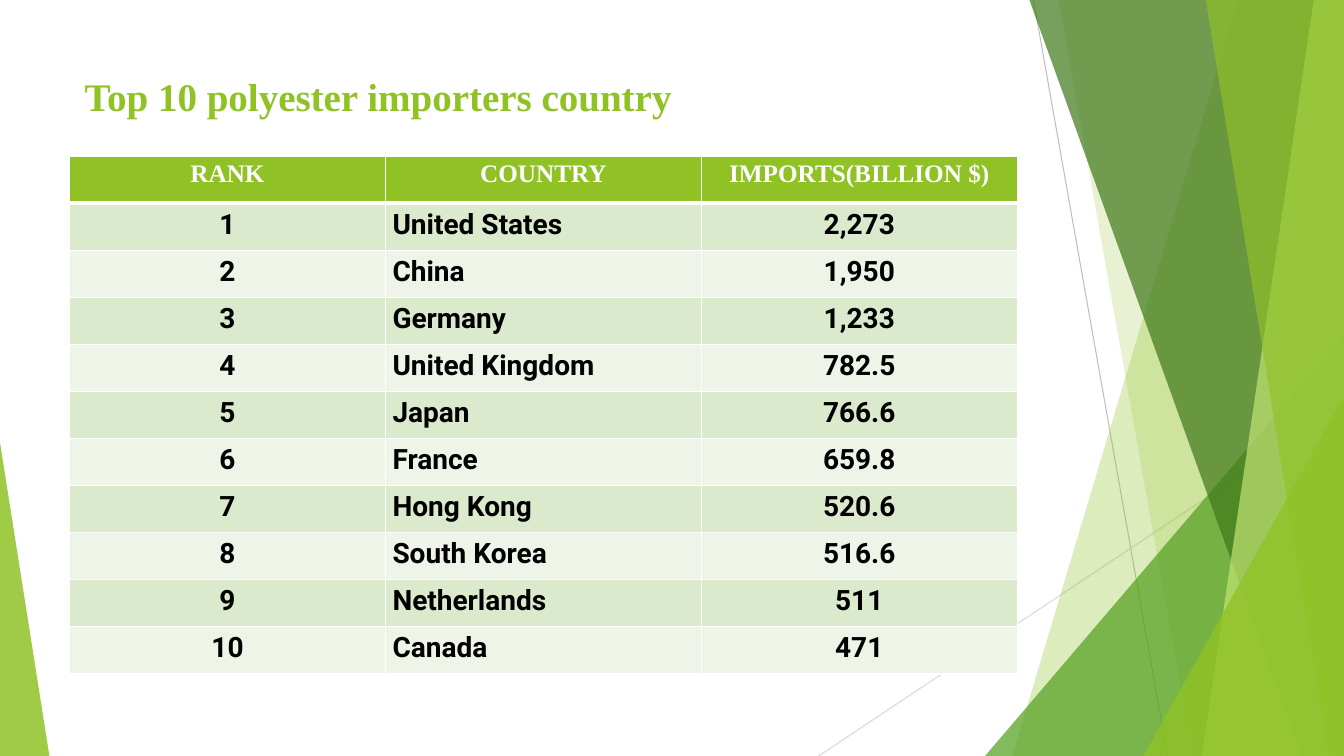
from lxml.etree import SubElement
from pptx import Presentation
from pptx.dml.color import RGBColor
from pptx.enum.shapes import MSO_CONNECTOR as Connector, MSO_SHAPE as Shape
from pptx.enum.text import MSO_ANCHOR as Anchor, PP_ALIGN as Align
from pptx.oxml.ns import qn
from pptx.util import Inches, Pt

WIDTH, HEIGHT = 13.33, 7.5
GREEN = "90C226"
SERIF, SANS = "Times New Roman", "Roboto"
TITLE = "Top 10 polyester importers country"
HEADERS = ["RANK", "COUNTRY", "IMPORTS(BILLION $)"]
IMPORTERS = [
    ("United States", "2,273"),
    ("China", "1,950"),
    ("Germany", "1,233"),
    ("United Kingdom", "782.5"),
    ("Japan", "766.6"),
    ("France", "659.8"),
    ("Hong Kong", "520.6"),
    ("South Korea", "516.6"),
    ("Netherlands", "511"),
    ("Canada", "471"),
]


def color(value):
    return RGBColor.from_string(value)


def add_span(para, text, size, font, tint):
    span = para.add_run()
    span.text = text
    span.font.size = Pt(size)
    span.font.name = font
    span.font.bold = True
    span.font.color.rgb = color(tint)


def paint(shape, tint, opacity):
    """Fill a facet with a translucent colour and no outline."""
    shape.shadow.inherit = False
    shape.fill.solid()
    shape.fill.fore_color.rgb = color(tint)
    shape.line.fill.background()
    tone = shape.fill._xPr.find(qn("a:solidFill"))[0]
    SubElement(tone, qn("a:alpha"), val=str(opacity * 1000))


def add_ray(page, start, end, tint):
    ray = page.shapes.add_connector(
        Connector.STRAIGHT, *(Inches(v) for v in (*start, *end)))
    ray.line.color.rgb = color(tint)
    ray.line.width = Pt(0.75)
    SubElement(ray._element.spPr, qn("a:effectLst"))


def add_band(page, top_left, bottom_left, tint, opacity):
    """Full-height facet reaching the right edge of the slide."""
    corners = [(top_left, 0), (WIDTH, 0), (WIDTH, HEIGHT), (bottom_left, HEIGHT)]
    points = [(Inches(x), Inches(y)) for x, y in corners]
    outline = page.shapes.build_freeform(*points[0])
    outline.add_line_segments(points[1:], close=True)
    paint(outline.convert_to_shape(), tint, opacity)


def add_corner(page, left, width, height, apex, tint, opacity):
    """Right-angled triangle standing on the bottom edge."""
    corner = page.shapes.add_shape(
        Shape.ISOSCELES_TRIANGLE, Inches(left), Inches(HEIGHT - height),
        Inches(width), Inches(height))
    corner.adjustments[0] = apex
    paint(corner, tint, opacity)


def add_backdrop(page):
    add_ray(page, (10.25, 0), (11.58, HEIGHT), "BFBFBF")
    add_ray(page, (WIDTH, 4.03), (8.12, HEIGHT), "D9D9D9")
    add_band(page, 12.28, 10.04, GREEN, 30)
    add_band(page, 10.5, 11.83, GREEN, 20)
    add_corner(page, 9.77, 3.56, 4.17, 1, "54A021", 72)
    add_band(page, 10.21, 12.91, "3F7819", 70)
    add_band(page, 13.03, 11.92, "C0E474", 70)
    add_band(page, 11.96, 13.18, GREEN, 65)
    add_corner(page, 11.34, 1.99, 3.57, 1, GREEN, 80)
    add_corner(page, 0, 0.49, 3.11, 0, GREEN, 85)


def add_title(page, left, top, width, height):
    title = page.shapes.title
    title.left, title.top = Inches(left), Inches(top)
    title.width, title.height = Inches(width), Inches(height)
    frame = title.text_frame
    frame.word_wrap = True
    frame.vertical_anchor = Anchor.TOP
    para = frame.paragraphs[0]
    para.alignment = Align.LEFT
    add_span(para, TITLE, 27.9, SERIF, GREEN)


def add_borders(cell, top, bottom):
    widths = {"a:lnL": 1, "a:lnR": 1, "a:lnT": top, "a:lnB": bottom}
    properties = cell._tc.get_or_add_tcPr()
    for side, width in widths.items():
        border = SubElement(properties, qn(side), w=str(Pt(width)))
        fill = SubElement(border, qn("a:solidFill"))
        SubElement(fill, qn("a:srgbClr"), val="FFFFFF")


def add_importers(page, left, top, width, height):
    rows = [HEADERS] + [
        (str(rank), *entry) for rank, entry in enumerate(IMPORTERS, 1)]
    table = page.shapes.add_table(
        len(rows), len(HEADERS), Inches(left), Inches(top),
        Inches(width), Inches(height)).table
    for r, row in enumerate(rows):
        # Header, then alternating stripes
        if r == 0:
            fill, style = GREEN, (18, SERIF, "FFFFFF")
        else:
            fill, style = ("DBE9CD" if r % 2 else "EEF4E8"), (20, SANS, "000000")
        for c, text in enumerate(row):
            cell = table.cell(r, c)
            cell.margin_left = cell.margin_right = Inches(0.07)
            cell.margin_top = cell.margin_bottom = 0
            add_borders(cell, 3 if r == 1 else 1, 3 if r == 0 else 1)
            cell.fill.solid()
            cell.fill.fore_color.rgb = color(fill)
            para = cell.text_frame.paragraphs[0]
            para.alignment = Align.LEFT if r and c == 1 else Align.CENTER
            para.line_spacing = 1.15
            add_span(para, text, *style)


def main():
    deck = Presentation()
    deck.slide_width, deck.slide_height = Inches(WIDTH), Inches(HEIGHT)
    page = deck.slides.add_slide(deck.slide_layouts.get_by_name("Title Only"))
    add_backdrop(page)
    add_title(page, 0.74, 0.67, 9.4, 0.89)
    add_importers(page, 0.69, 1.55, 9.4, 5.14)
    deck.save("out.pptx")


if __name__ == "__main__":
    main()
